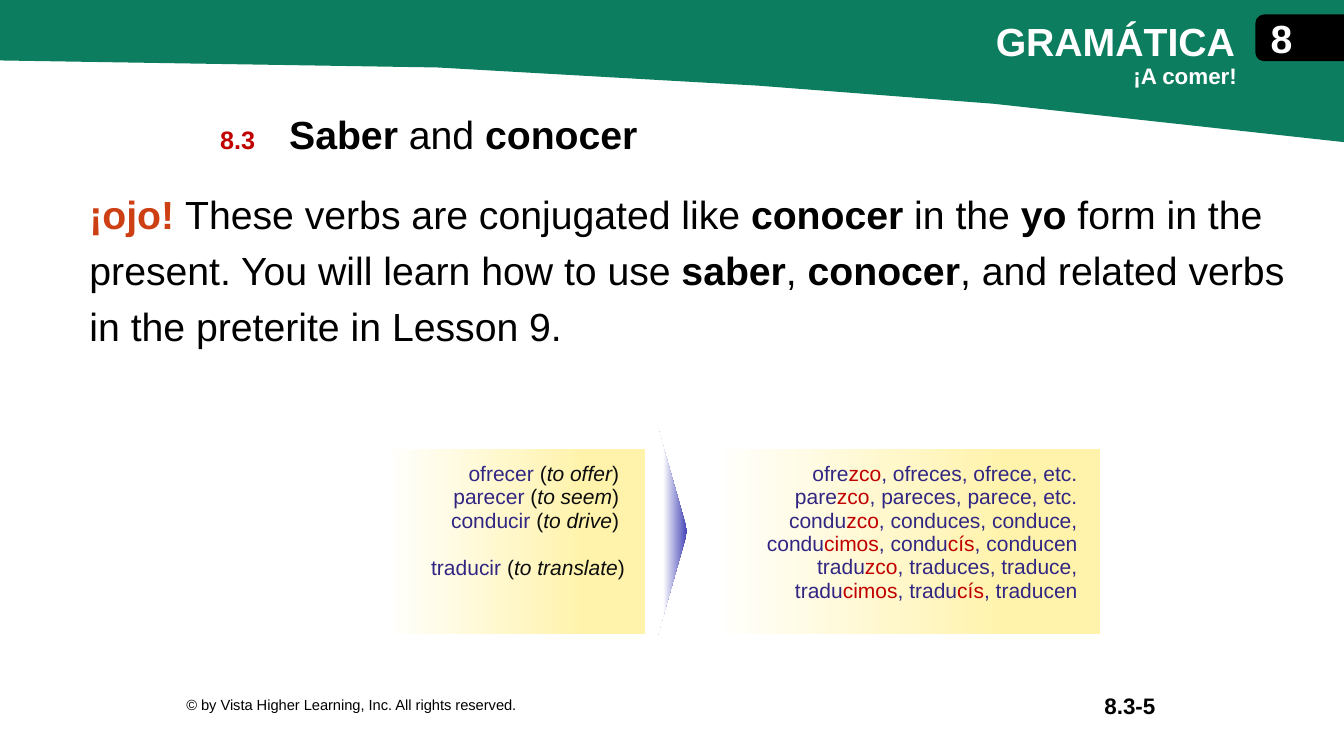
from pptx import Presentation
from pptx.dml.color import RGBColor
from pptx.enum.shapes import MSO_SHAPE as Shape
from pptx.enum.text import MSO_ANCHOR as Anchor, PP_ALIGN as Align
from pptx.oxml.ns import qn
from pptx.util import Inches, Pt

BLACK, WHITE, RED, GREEN = "000000", "FFFFFF", "C00000", "0C7D5E"
ORANGE, INDIGO, GRAY = "CD4014", "312783", "0D0D0D"
YELLOW, BLUE = "FFF3AC", "4141B5"
hex_color = RGBColor.from_string

deck = Presentation()
deck.slide_width, deck.slide_height = Inches(13.33), Inches(7.5)
COLUMN, ROW = deck.slide_width / 100, deck.slide_height / 100
page = deck.slides.add_slide(deck.slide_layouts[6])
shapes = page.shapes


def frame(left, top, width, height):
    """Turn percentages of the slide into lengths."""
    return [round(n * unit) for n, unit in
            zip((left, top, width, height), (COLUMN, ROW, COLUMN, ROW))]


def write(para, size, spans, align=Align.LEFT):
    """Add runs given as (text, color, style), where style is "", "b" or "i"."""
    para.alignment = align
    for text, color, style in spans:
        span = para.add_run()
        span.text = text
        span.font.name = "Arial"
        span.font.size = Pt(size)
        span.font.bold = style == "b"
        span.font.italic = style == "i"
        span.font.color.rgb = hex_color(color)


# Green banner
edge = [(100, 18.8), (73.95, 13.73), (56.4, 11.33), (32.55, 8.93),
        (0, 8), (0, 0), (100, 0)]
corners = [(round(x * COLUMN), round(y * ROW)) for x, y in edge]
builder = shapes.build_freeform(*corners[0], scale=1.0)
builder.add_line_segments(corners[1:], close=True)
banner = builder.convert_to_shape()
banner.shadow.inherit = False
banner.fill.solid()
banner.fill.fore_color.rgb = hex_color(GREEN)
banner.line.fill.background()

# Black lesson tab at the right edge
tab = shapes.add_shape(Shape.ROUND_2_SAME_RECTANGLE, *frame(95.03, -0.8, 3.38, 11.6))
tab.rotation = 270
tab.adjustments[0] = 0.18
tab.shadow.inherit = False
tab.fill.solid()
tab.fill.fore_color.rgb = hex_color(BLACK)
tab.line.color.rgb = hex_color(BLACK)
tab.line.width = Pt(1)

# Section and lesson numbers
for place, size, text, color in [
    ((14.62, 15.73, 6.15, 5.33), 18, "8.3", RED),
    ((93.68, 2.4, 2.62, 5.33), 28, "8", WHITE),
]:
    number = shapes.add_shape(Shape.ROUNDED_RECTANGLE, *frame(*place))
    number.shadow.inherit = False
    number.fill.background()
    number.line.fill.background()
    number.text_frame.vertical_anchor = Anchor.MIDDLE
    write(number.text_frame.paragraphs[0], size, [(text, color, "b")], Align.CENTER)

# Gradient panels and the arrow between them
panel_stops = [(0.24, YELLOW), (1, WHITE)]
for kind, place, turn, angle, stops in [
    (Shape.ROUND_2_SAME_RECTANGLE, (52.88, 59.33, 28.95, 24.53), 180, 0, panel_stops),
    (Shape.ROUND_2_SAME_RECTANGLE, (28.58, 59.33, 19.42, 24.53), 180, 0, panel_stops),
    (Shape.ISOSCELES_TRIANGLE, (42.15, 68.27, 15.75, 4), 90, 270,
     [(0, BLUE), (0.81, WHITE)]),
]:
    panel = shapes.add_shape(kind, *frame(*place))
    panel.rotation = turn
    if kind == Shape.ROUND_2_SAME_RECTANGLE:
        panel.adjustments[0] = 0
    panel.shadow.inherit = False
    panel.line.fill.background()
    panel.fill.gradient()
    panel.fill.gradient_angle = angle
    for stop, (position, color) in zip(panel.fill.gradient_stops, stops):
        stop.position = position
        stop.color.rgb = hex_color(color)

# Headings, body and footer
body = [
    ("¡ojo! ", ORANGE, "b"),
    ("These verbs are conjugated like ", BLACK, ""),
    ("conocer", BLACK, "b"),
    (" in the ", BLACK, ""),
    ("yo", BLACK, "b"),
    (" form in the present. You will learn how to use ", BLACK, ""),
    ("saber", BLACK, "b"),
    (", ", BLACK, ""),
    ("conocer", BLACK, "b"),
    (", and related verbs in the preterite in Lesson 9.", BLACK, ""),
]
title = [("Saber ", BLACK, "b"), ("and ", BLACK, ""), ("conocer", BLACK, "b")]
rights = "© by Vista Higher Learning, Inc. All rights reserved."
for place, size, align, anchor, leading, spans in [
    ((20.78, 14, 62.1, 7.6), 28, Align.LEFT, Anchor.TOP, None, title),
    ((73.35, 1.6, 26.62, 7.6), 28, Align.LEFT, Anchor.TOP, None,
     [("GRAMÁTICA", WHITE, "b")]),
    ((79.42, 7.6, 13.35, 4.93), 16, Align.RIGHT, Anchor.TOP, None,
     [("¡A comer!", WHITE, "b")]),
    ((5.92, 23.33, 91.72, 45.2), 28, Align.LEFT, Anchor.TOP, Pt(40), body),
    ((64.12, 90.93, 22.58, 4.67), 16, Align.RIGHT, Anchor.MIDDLE, None,
     [("8.3-5", BLACK, "b")]),
    ((13.12, 90.93, 48.38, 4.67), 10.5, Align.LEFT, Anchor.MIDDLE, None,
     [(rights, BLACK, "")]),
]:
    box = shapes.add_textbox(*frame(*place))
    box.text_frame.word_wrap = True
    box.text_frame.vertical_anchor = anchor
    para = box.text_frame.paragraphs[0]
    para.line_spacing = leading
    write(para, size, spans, align)

# Verb table: infinitives on the left, present-tense forms on the right
infinitives = [("ofrecer ", "to offer", ") "), ("parecer ", "to seem", ") "),
               ("conducir ", "to drive", ") "), ("traducir ", "to translate", ")")]
# Stems and endings alternate along each line
forms = [
    ("ofre", "zco", ", ofreces, ofrece, etc."),
    ("pare", "zco", ", pareces, parece, etc."),
    ("condu", "zco", ", conduces, conduce,"),
    ("condu", "cimos", ", condu", "cís", ", conducen"),
    ("tradu", "zco", ", traduces, traduce,"),
    ("tradu", "cimos", ", tradu", "cís", ", traducen"),
]
verb_lines = [[(verb, INDIGO, ""), ("(", GRAY, ""), (meaning, GRAY, "i"), (end, GRAY, "")]
              for verb, meaning, end in infinitives]
form_lines = [[(part, (INDIGO, RED)[i % 2], "") for i, part in enumerate(parts)]
              for parts in forms]

holder = shapes.add_table(1, 2, *frame(30, 60.53, 50.92, 21.33))
for style in holder.element.iter(qn("a:tableStyleId")):
    style.text = "{2D5ABB26-0587-4C30-8999-92F81FD0307C}"
table = holder.table
table.first_row = table.horz_banding = False
for index, (share, lines) in enumerate([(17.25, verb_lines), (33.67, form_lines)]):
    table.columns[index].width = round(share * COLUMN)
    cell = table.cell(0, index)
    cell.fill.background()
    for number, spans in enumerate(lines):
        text = cell.text_frame
        para = text.add_paragraph() if number else text.paragraphs[0]
        write(para, 15, spans, Align.RIGHT)
# Level traducir with its forms, one line further down
table.cell(0, 0).text_frame.paragraphs[-1].space_before = Pt(17)

deck.save("out.pptx")
